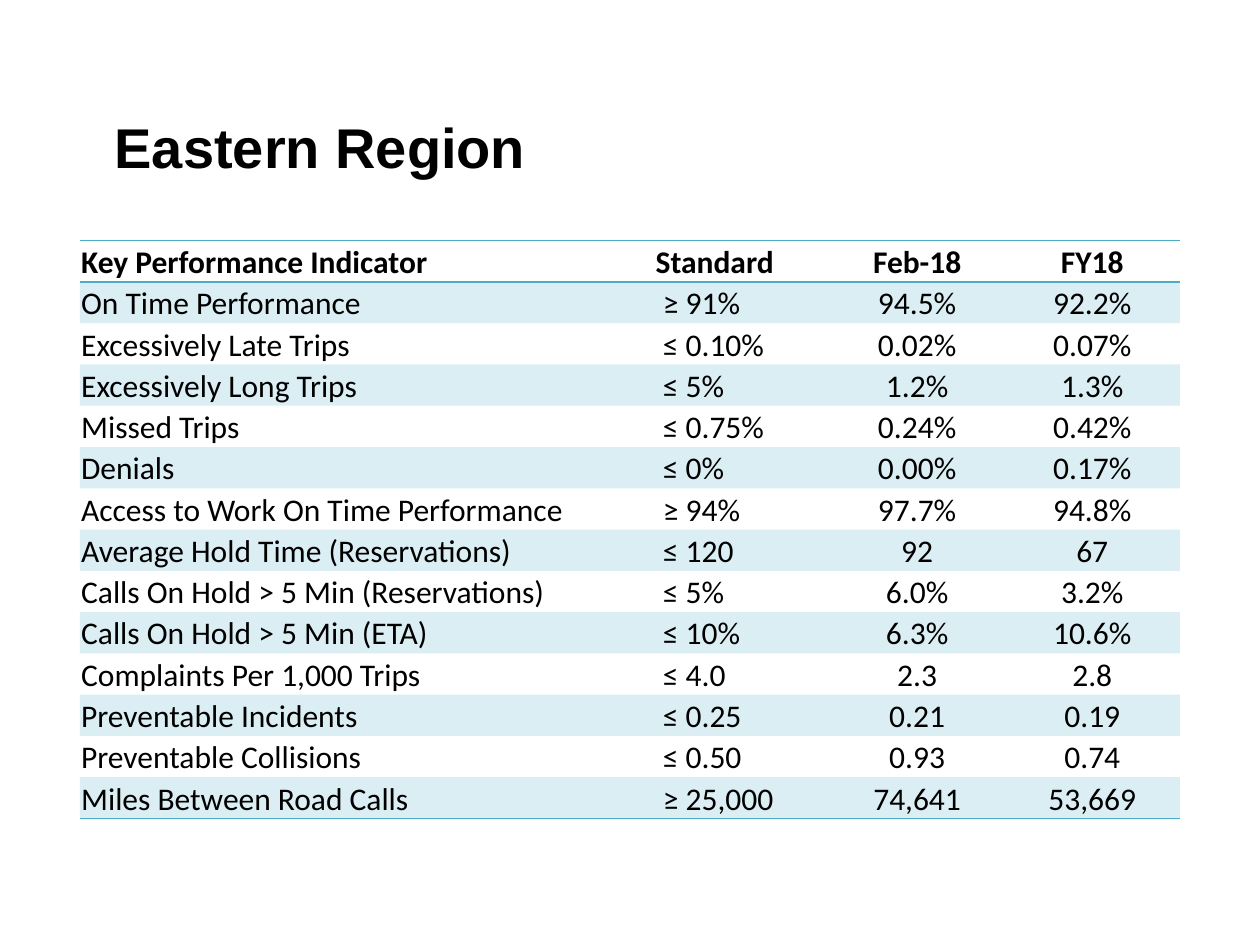
from dataclasses import dataclass
from typing import NamedTuple

from lxml.etree import SubElement
from pptx import Presentation
from pptx.dml.color import RGBColor
from pptx.enum.text import MSO_ANCHOR, PP_ALIGN
from pptx.oxml import parse_xml
from pptx.oxml.ns import nsdecls, qn
from pptx.util import Pt


@dataclass(frozen=True)
class Theme:
    """Colours, fonts, type sizes and line widths of the slide."""
    ink: str = "000000"
    accent: str = "4BACC6"
    band_opacity: int = 20
    title_font: str = "Arial"
    table_font: str = "Calibri"
    title_size: float = 32
    table_size: float = 18
    rule_width: float = 1
    plain_table_style: str = "{2D5ABB26-0587-4C30-8999-92F81FD0307C}"


class Box(NamedTuple):
    """A position and a size in points."""
    left: float
    top: float
    width: float
    height: float


class Indicator(NamedTuple):
    """One row of the performance table."""
    name: str
    standard: str
    month: str
    fiscal_year: str


THEME = Theme()
TITLE_BOX = Box(58.3, 60.5, 604, 46)
TABLE_BOX = Box(45.7, 137.5, 628.56, 330.4)
COLUMN_WIDTHS = (328.32, 100.08, 100.08, 100.08)
CELL_MARGIN = 0.7
STANDARD_INDENT = 4.8
HEADINGS = Indicator("Key Performance Indicator", "Standard", "Feb-18", "FY18")
INDICATORS = (
    Indicator("On Time Performance", "≥ 91%", "94.5%", "92.2%"),
    Indicator("Excessively Late Trips", "≤ 0.10%", "0.02%", "0.07%"),
    Indicator("Excessively Long Trips", "≤ 5%", "1.2%", "1.3%"),
    Indicator("Missed Trips", "≤ 0.75%", "0.24%", "0.42%"),
    Indicator("Denials", "≤ 0%", "0.00%", "0.17%"),
    Indicator("Access to Work On Time Performance", "≥ 94%", "97.7%", "94.8%"),
    Indicator("Average Hold Time (Reservations)", "≤ 120", "92", "67"),
    Indicator("Calls On Hold > 5 Min (Reservations)", "≤ 5%", "6.0%", "3.2%"),
    Indicator("Calls On Hold > 5 Min (ETA)", "≤ 10%", "6.3%", "10.6%"),
    Indicator("Complaints Per 1,000 Trips", "≤ 4.0", "2.3", "2.8"),
    Indicator("Preventable Incidents", "≤ 0.25", "0.21", "0.19"),
    Indicator("Preventable Collisions", "≤ 0.50", "0.93", "0.74"),
    Indicator("Miles Between Road Calls", "≥ 25,000", "74,641", "53,669"),
)


def format_text(text_frame, font_name: str, size: float, bold: bool, alignment) -> None:
    """Format the first paragraph and its run."""
    paragraph = text_frame.paragraphs[0]
    paragraph.alignment = alignment
    font = paragraph.runs[0].font
    font.name, font.size, font.bold = font_name, Pt(size), bold
    font.color.rgb = RGBColor.from_string(THEME.ink)


def fill_cell(cell, banded: bool) -> None:
    """Give a cell the translucent band colour or no fill."""
    if not banded:
        cell.fill.background()
        return
    cell.fill.solid()
    cell.fill.fore_color.rgb = RGBColor.from_string(THEME.accent)
    band_colour = cell._tc.tcPr.find(f".//{qn('a:srgbClr')}")
    SubElement(band_colour, qn("a:alpha"), val=str(THEME.band_opacity * 1000))


def rule_cell(cell, sides: str) -> None:
    """Draw accent rules on the given sides, in the order T then B."""
    for position, side in enumerate(sides):
        rule = parse_xml(
            f'<a:ln{side} {nsdecls("a")} w="{Pt(THEME.rule_width)}"><a:solidFill>'
            f'<a:srgbClr val="{THEME.accent}"/></a:solidFill></a:ln{side}>'
        )
        cell._tc.get_or_add_tcPr().insert(position, rule)


def add_title(slide, wording: str) -> None:
    """Place and format the slide title."""
    title = slide.shapes.title
    title.left, title.top, title.width, title.height = map(Pt, TITLE_BOX)
    title.text_frame.text = wording
    title.text_frame.vertical_anchor = MSO_ANCHOR.MIDDLE
    format_text(title.text_frame, THEME.title_font, THEME.title_size, True, PP_ALIGN.LEFT)


def add_indicator_table(slide, rows: tuple[Indicator, ...]) -> None:
    """Draw the indicators under a ruled heading row with alternate bands."""
    frame = slide.shapes.add_table(len(rows), len(COLUMN_WIDTHS), *map(Pt, TABLE_BOX))
    frame.element.find(f".//{qn('a:tableStyleId')}").text = THEME.plain_table_style
    table = frame.table
    table.horz_banding = False
    for column, width in zip(table.columns, COLUMN_WIDTHS):
        column.width = Pt(width)
    for row_index, indicator in enumerate(rows):
        heading = row_index == 0
        sides = "TB" if heading else "B" if row_index == len(rows) - 1 else ""
        table.rows[row_index].height = Pt(TABLE_BOX.height / len(rows))
        for column_index, wording in enumerate(indicator):
            cell = table.cell(row_index, column_index)
            indented = column_index == 1 and not heading
            cell.margin_left = Pt(STANDARD_INDENT if indented else CELL_MARGIN)
            cell.margin_right = cell.margin_top = Pt(CELL_MARGIN)
            cell.margin_bottom = Pt(0)
            cell.vertical_anchor = MSO_ANCHOR.BOTTOM
            cell.text_frame.text = wording
            alignment = PP_ALIGN.LEFT if column_index < 2 else PP_ALIGN.CENTER
            format_text(cell.text_frame, THEME.table_font, THEME.table_size, heading, alignment)
            fill_cell(cell, row_index % 2 == 1)
            rule_cell(cell, sides)


def main() -> None:
    """Build and save the regional performance slide."""
    presentation = Presentation()
    presentation.slide_width, presentation.slide_height = Pt(720), Pt(540)
    slide = presentation.slides.add_slide(presentation.slide_layouts[5])
    add_title(slide, "Eastern Region")
    add_indicator_table(slide, (HEADINGS, *INDICATORS))
    presentation.save("out.pptx")


if __name__ == "__main__":
    main()
